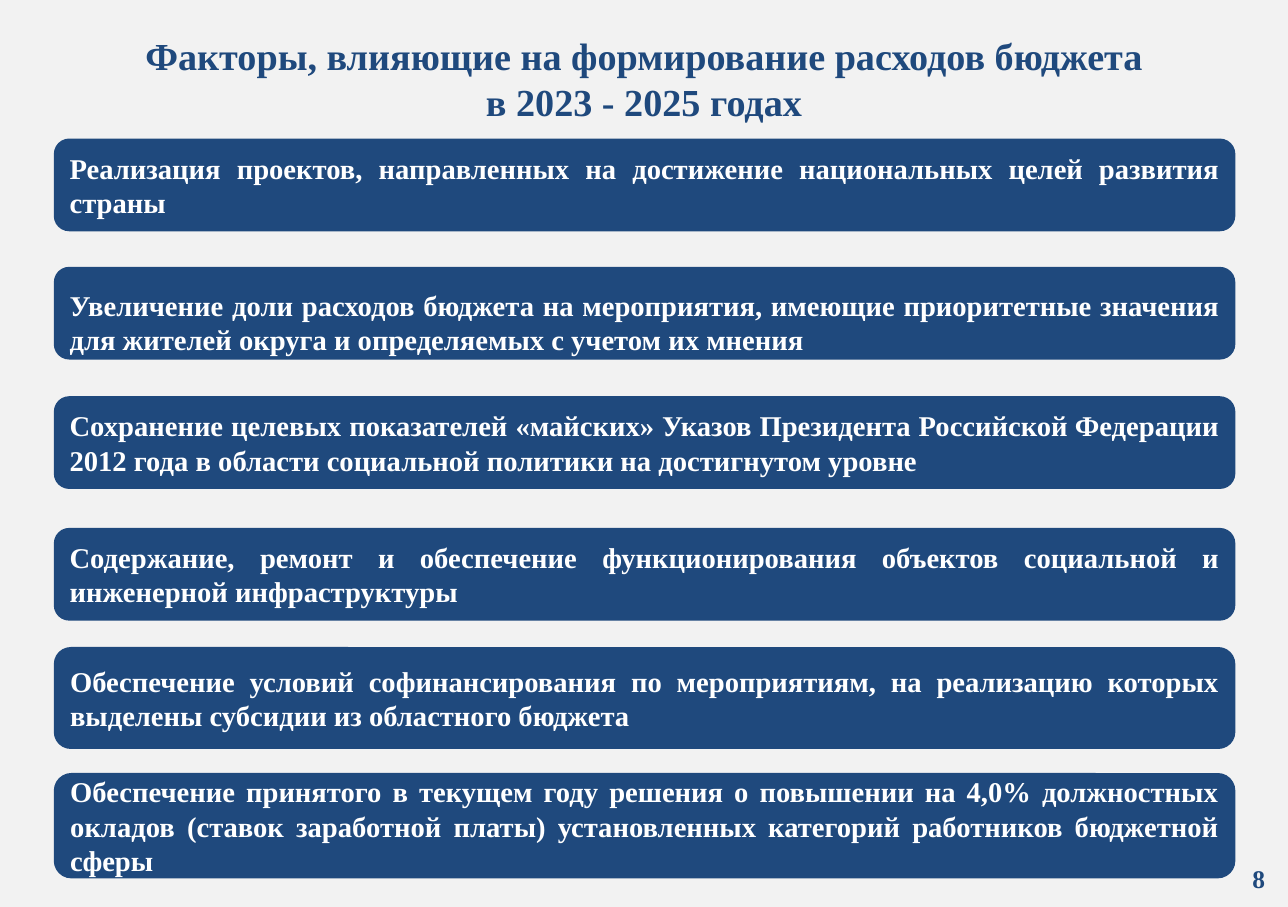
from pptx import Presentation
from pptx import util as u
from pptx.dml import color
from pptx.enum import shapes, text

NAVY = "1F497D"
WHITE = "FFFFFF"
GREY = "F2F2F2"
LEFT, WIDTH = 0.47, 10.32

FACTORS = [
    (1.21, 0.81, 0, "Реализация проектов, направленных на достижение национальных целей развития страны"),
    (2.33, 0.81, 0.16, "Увеличение доли расходов бюджета на мероприятия, имеющие приоритетные значения для жителей округа и определяемых с учетом их мнения"),
    (3.46, 0.81, 0, "Сохранение целевых показателей «майских» Указов Президента Российской\u00a0Федерации 2012 года в области социальной политики на достигнутом уровне"),
    (4.61, 0.81, 0, "Содержание, ремонт и обеспечение функционирования объектов социальной и инженерной инфраструктуры"),
    (5.65, 0.89, 0, "Обеспечение условий софинансирования по мероприятиям, на реализацию которых выделены субсидии из областного бюджета"),
    (6.75, 0.92, 0, "Обеспечение принятого в текущем году решения о повышении на 4,0% должностных окладов (ставок заработной платы) установленных категорий работников бюджетной сферы"),
]


def paint(fill, tint):
    fill.solid()
    fill.fore_color.rgb = color.RGBColor.from_string(tint)


def place(shape, left, top, width, height):
    shape.left, shape.top = u.Inches(left), u.Inches(top)
    shape.width, shape.height = u.Inches(width), u.Inches(height)


def frame(shape, side=0, top=0):
    body = shape.text_frame
    body.word_wrap = True
    body.auto_size = text.MSO_AUTO_SIZE.NONE
    body.vertical_anchor = text.MSO_ANCHOR.MIDDLE
    body.margin_left = body.margin_right = u.Inches(side)
    body.margin_top, body.margin_bottom = u.Inches(top), 0
    return body


def write(body, lines, size, tint, align):
    para = body.paragraphs[0]
    para.alignment = align
    para.line_spacing = 1.0
    para.space_before = u.Pt(0)
    for row, line in enumerate(lines):
        if row:
            para.add_line_break()
        run = para.add_run()
        run.text = line
        font = run.font
        font.name, font.size, font.bold = "Times New Roman", u.Pt(size), True
        font.color.rgb = color.RGBColor.from_string(tint)


def add_title(slide, lines):
    title = slide.shapes.title
    place(title, 0, 0.22, 11.25, 0.92)
    write(frame(title), lines, 24, NAVY, text.PP_ALIGN.CENTER)


def add_factor(slide, top, height, inset, words):
    bar = slide.shapes.add_shape(
        shapes.MSO_SHAPE.ROUNDED_RECTANGLE,
        u.Inches(LEFT), u.Inches(top), u.Inches(WIDTH), u.Inches(height))
    bar.shadow.inherit = False
    paint(bar.fill, NAVY)
    bar.line.fill.background()
    write(frame(bar, 0.1, inset), [words], 18, WHITE, text.PP_ALIGN.JUSTIFY)


def add_number(slide, number):
    box = slide.shapes.add_textbox(
        u.Inches(10.55), u.Inches(7.45), u.Inches(0.5), u.Inches(0.44))
    write(frame(box), [number], 16, NAVY, text.PP_ALIGN.RIGHT)


def main():
    deck = Presentation()
    deck.slide_width, deck.slide_height = u.Inches(11.25), u.Inches(7.92)
    slide = deck.slides.add_slide(deck.slide_layouts[5])
    paint(slide.background.fill, GREY)
    add_title(slide, ["Факторы, влияющие на формирование расходов бюджета",
                      "в 2023 - 2025 годах"])
    for factor in FACTORS:
        add_factor(slide, *factor)
    add_number(slide, "8")
    deck.save("out.pptx")


if __name__ == "__main__":
    main()
